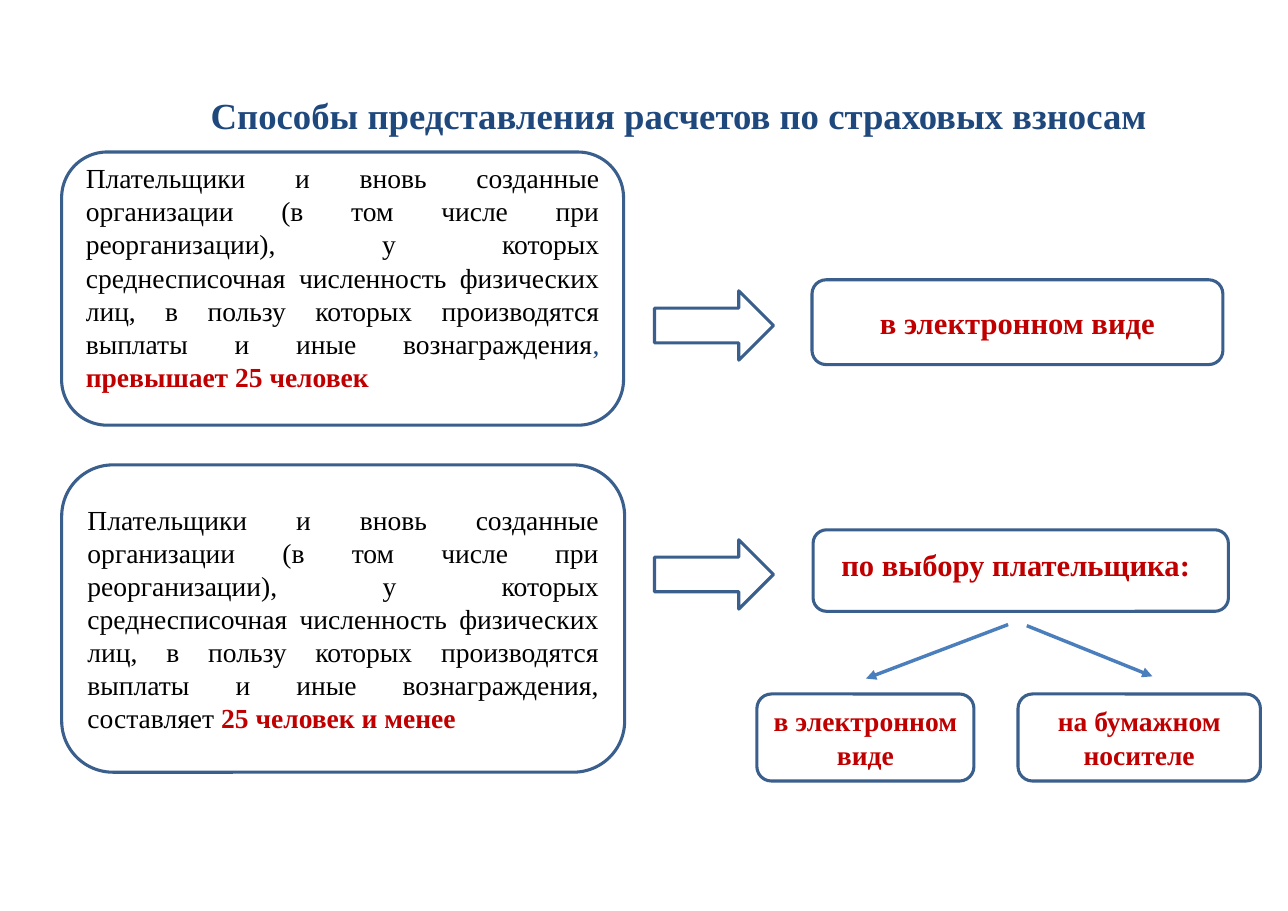
from lxml.etree import SubElement
from pptx import Presentation
from pptx.dml.color import RGBColor
from pptx.enum.shapes import MSO_CONNECTOR, MSO_SHAPE
from pptx.enum.text import MSO_ANCHOR, MSO_AUTO_SIZE, PP_ALIGN
from pptx.oxml.ns import qn
from pptx.util import Inches, Pt

FONT = "Times New Roman"
NAVY, OUTLINE, ARROW = "1F497D", "3A5F8C", "4B7EBC"
BLACK, RED = "000000", "C00000"
PAYERS = (
    "Плательщики и вновь созданные организации (в том числе при реорганизации), "
    "у которых среднесписочная численность физических лиц, в пользу которых "
    "производятся выплаты и иные вознаграждения"
)


def color(value):
    return RGBColor.from_string(value)


def add_run(paragraph, text, size, ink, bold):
    run = paragraph.add_run()
    run.text = text
    run.font.name = FONT
    run.font.size = Pt(size)
    run.font.bold = bold
    run.font.color.rgb = color(ink)


def add_title(slide, box, text):
    title = slide.shapes.title
    title.left, title.top, title.width, title.height = map(Inches, box)
    frame = title.text_frame
    frame.word_wrap = True
    frame.auto_size = MSO_AUTO_SIZE.NONE
    frame.vertical_anchor = MSO_ANCHOR.MIDDLE
    frame.margin_left = frame.margin_right = Inches(0.11)
    frame.margin_top = frame.margin_bottom = Inches(0.06)
    paragraph = frame.paragraphs[0]
    paragraph.alignment = PP_ALIGN.CENTER
    paragraph.line_spacing = Pt(52)
    add_run(paragraph, text, 24, NAVY, True)


def add_outline(slide, kind, box):
    """Add an unfilled preset shape with the common blue outline."""
    shape = slide.shapes.add_shape(kind, *map(Inches, box))
    shape.shadow.inherit = False
    shape.fill.background()
    shape.line.color.rgb = color(OUTLINE)
    shape.line.width = Pt(2)
    return shape


def add_card(slide, box, runs, size, align=PP_ALIGN.CENTER, right=0.1, bottom=0.05):
    """Add a rounded box; runs are (text, colour, bold), right and bottom are insets."""
    frame = add_outline(slide, MSO_SHAPE.ROUNDED_RECTANGLE, box).text_frame
    frame.word_wrap = True
    frame.vertical_anchor = MSO_ANCHOR.MIDDLE
    frame.margin_right, frame.margin_bottom = Inches(right), Inches(bottom)
    paragraph = frame.paragraphs[0]
    paragraph.alignment = align
    for text, ink, bold in runs:
        add_run(paragraph, text, size, ink, bold)


def add_branch(slide, start, end):
    branch = slide.shapes.add_connector(
        MSO_CONNECTOR.STRAIGHT, *map(Inches, (*start, *end)))
    branch.line.color.rgb = color(ARROW)
    branch.line.width = Pt(2.25)
    SubElement(branch.line._get_or_add_ln(), qn("a:tailEnd"), type="triangle")
    SubElement(branch._element.spPr, qn("a:effectLst"))


def add_electronic_row(slide, left, top):
    """More than 25 people: electronic form only."""
    add_card(slide, (left, top, 5.1, 2.48), [
        (PAYERS, BLACK, False),
        (", ", NAVY, False),
        ("превышает 25 человек", RED, True),
    ], 18, PP_ALIGN.JUSTIFY, bottom=0.26)
    add_outline(slide, MSO_SHAPE.RIGHT_ARROW, (left + 5.38, top + 1.26, 1.08, 0.63))
    add_card(slide, (left + 6.81, top + 1.16, 3.73, 0.77),
             [("в электронном виде", RED, True)], 20)


def add_choice_row(slide, left, top):
    """25 people or fewer: the payer chooses between two forms."""
    add_card(slide, (left, top, 5.11, 2.79), [
        (PAYERS + ", составляет ", BLACK, False),
        ("25 человек и менее", RED, True),
    ], 18, PP_ALIGN.JUSTIFY)
    add_outline(slide, MSO_SHAPE.RIGHT_ARROW, (left + 5.38, top + 0.68, 1.08, 0.63))
    add_card(slide, (left + 6.82, top + 0.59, 3.77, 0.74),
             [("по выбору плательщика:", RED, True)], 20, right=0.19, bottom=0.16)
    for text, offset, width, start, end in (
        ("в электронном виде", 6.31, 1.97, (8.59, 1.45), (7.3, 1.94)),
        ("на бумажном носителе", 8.68, 2.2, (8.76, 1.46), (9.9, 1.92)),
    ):
        add_card(slide, (left + offset, top + 2.08, width, 0.79),
                 [(text, RED, True)], 18)
        add_branch(slide, *((left + x, top + y) for x, y in (start, end)))


def main():
    presentation = Presentation()
    presentation.slide_width = Inches(11.69)
    presentation.slide_height = Inches(8.27)
    slide = presentation.slides.add_slide(presentation.slide_layouts[5])
    slide.background.fill.solid()
    slide.background.fill.fore_color.rgb = color("FFFFFF")
    add_title(slide, (1.47, 0.24, 9.38, 1.28),
              "Способы представления расчетов по страховых взносам")
    add_electronic_row(slide, 0.56, 1.38)
    add_choice_row(slide, 0.56, 4.22)
    presentation.save("out.pptx")


if __name__ == "__main__":
    main()
